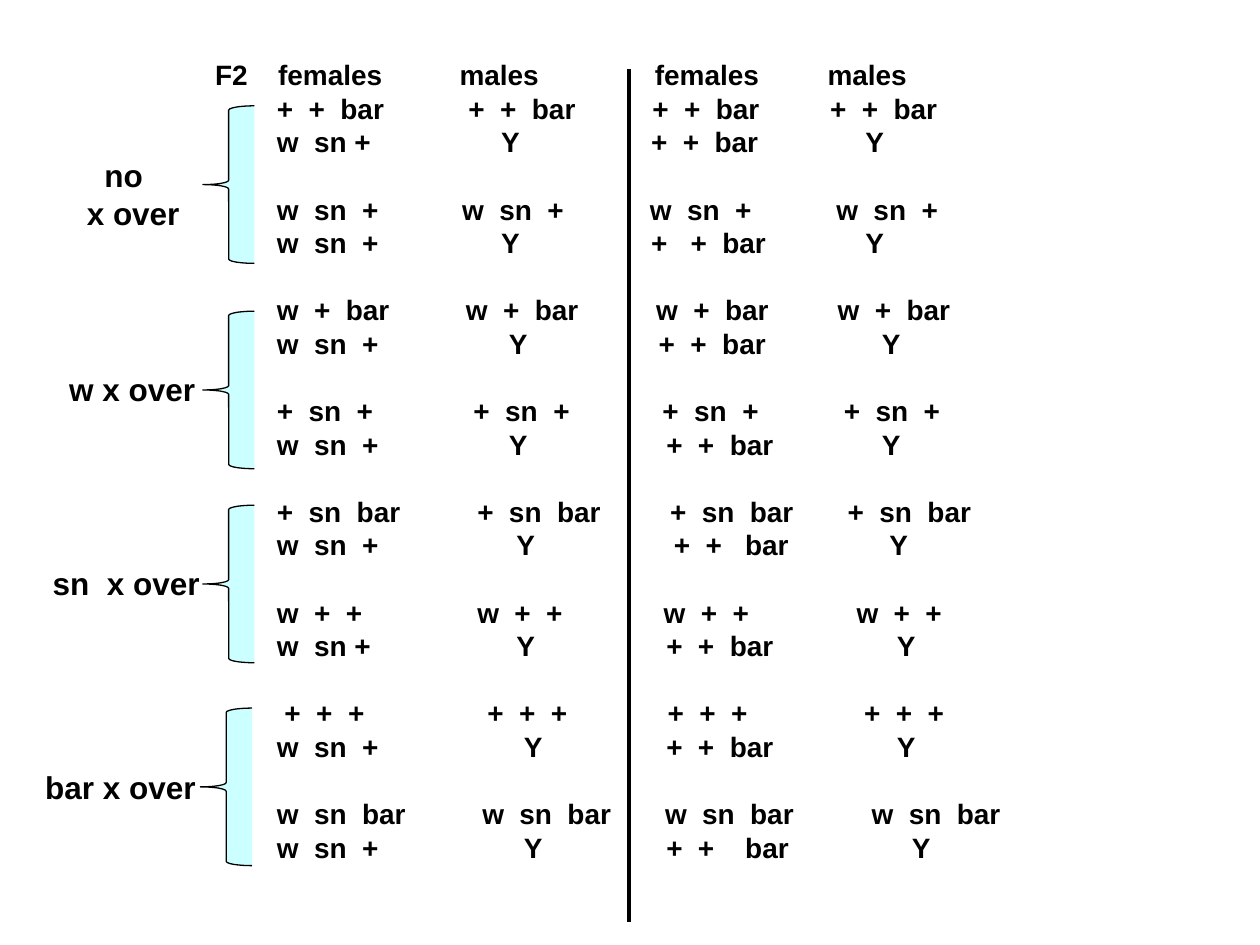
"""Build the slide of F2 offspring by crossover class."""
from typing import NamedTuple

from lxml.etree import SubElement
from pptx import Presentation
from pptx.dml.color import RGBColor
from pptx.enum.shapes import MSO_CONNECTOR, MSO_SHAPE
from pptx.oxml.ns import qn
from pptx.util import Inches, Pt

LEFT, INSET = 1.61, 0.1
STEP = 19.2
BLACK, CYAN = "000000", "CCFFFF"
FONT = {"name": "Arial", "bold": True}


class Row(NamedTuple):
    """One line of genotypes, with the slide position of each column."""
    cells: str
    stops: tuple
    lead: str = ""
    gap: bool = False


class Group(NamedTuple):
    """One crossover class: its label lines and its brace."""
    lines: tuple
    box: tuple
    brace: tuple


ROWS = [
    Row("females|males|females|males", (2.21, 3.65, 5.2, 6.57), lead="F2"),
    Row("+  +  bar|+  +  bar|+  +  bar|+  +  bar", (2.2, 3.72, 5.18, 6.59)),
    Row("w  sn +|Y|+  +  bar|Y", (2.2, 3.98, 5.17, 6.87)),
    Row("w  sn  +|w  sn  +|w  sn  +|w  sn  +", (2.2, 3.67, 5.16, 6.64), gap=True),
    Row("w  sn  +|Y|+   +  bar|Y", (2.2, 3.98, 5.17, 6.87)),
    Row("w  +  bar|w  +  bar|w  +  bar|w  +  bar", (2.2, 3.7, 5.21, 6.65), gap=True),
    Row("w  sn  +|Y|+  +  bar|Y", (2.2, 4.04, 5.23, 7)),
    Row("+  sn  +|+  sn  +|+  sn  +|+  sn  +", (2.2, 3.76, 5.26, 6.7), gap=True),
    Row("w  sn  +|Y|+  +  bar|Y", (2.2, 4.04, 5.29, 7)),
    Row("+  sn  bar|+  sn  bar|+  sn  bar|+  sn  bar", (2.2, 3.79, 5.32, 6.73), gap=True),
    Row("w  sn  +|Y|+  +   bar|Y", (2.2, 4.1, 5.35, 7.06)),
    Row("w  +  +|w  +  +|w  +  +|w  +  +", (2.2, 3.79, 5.27, 6.8), gap=True),
    Row("w  sn +|Y|+  +  bar|Y", (2.2, 4.1, 5.29, 7.12)),
    Row("+  +  +|+  +  +|+  +  +|+  +  +", (2.26, 3.87, 5.3, 6.86), gap=True),
    Row("w  sn  +|Y|+  +  bar|Y", (2.2, 4.16, 5.29, 7.12)),
    Row("w  sn  bar|w  sn  bar|w  sn  bar|w  sn  bar", (2.2, 3.83, 5.28, 6.92), gap=True),
    Row("w  sn  +|Y|+  +    bar|Y", (2.2, 4.16, 5.29, 7.24)),
]
GROUPS = [
    Group(("no", "x over"), (0.59, 1.19, 0.95, 0.71), (1.61, 0.84)),
    Group(("w x over",), (0.45, 2.89, 1.21, 0.4), (1.61, 2.47)),
    Group(("sn  x over",), (0.32, 4.43, 1.38, 0.4), (1.61, 4.01)),
    Group(("bar x over",), (0.26, 6.05, 1.41, 0.4), (1.59, 5.62)),
]


def tint(code: str) -> RGBColor:
    """Turn a hex string into a colour."""
    return RGBColor.from_string(code)


def write(para, text: str, size: float, lead: float) -> None:
    """Fill a paragraph with one styled run."""
    run = para.add_run()
    run.text = text
    for name, value in {**FONT, "size": Pt(size)}.items():
        setattr(run.font, name, value)
    run.font.color.rgb = tint(BLACK)
    para.line_spacing = Pt(lead)


def frame(slide, box: tuple, wrap: bool):
    """Add a text box and return its text frame."""
    body = slide.shapes.add_textbox(*map(Inches, box)).text_frame
    body.word_wrap = wrap
    return body


def lines(body, count: int) -> list:
    """Return the given number of paragraphs in a text frame."""
    return [body.paragraphs[0]] + [body.add_paragraph() for _ in range(count - 1)]


def draw_rows(slide, rows: list) -> None:
    """Write the genotype rows, with columns set by tab stops."""
    body = frame(slide, (LEFT, 0.41, 6.56, 6.6), True)
    for para, row in zip(lines(body, len(rows)), rows):
        write(para, "\t".join([row.lead, *row.cells.split("|")]), 16, STEP)
        para.space_before = Pt(STEP if row.gap else 0)
        tabs = SubElement(para._p.get_or_add_pPr(), qn("a:tabLst"))
        for stop in row.stops:
            place = Inches(stop - LEFT - INSET)
            SubElement(tabs, qn("a:tab"), pos=str(place), algn="l")


def draw_group(slide, group: Group) -> None:
    """Draw a brace and the label beside it."""
    brace = slide.shapes.add_shape(
        MSO_SHAPE.LEFT_BRACE, *map(Inches, (*group.brace, 0.41, 1.25)))
    brace.shadow.inherit = False
    brace.fill.solid()
    brace.fill.fore_color.rgb = tint(CYAN)
    brace.line.color.rgb = tint(BLACK)
    brace.line.width = Pt(0.75)
    paras = lines(frame(slide, group.box, False), len(group.lines))
    for para, text in zip(paras, group.lines):
        write(para, text, 18, 21.6)
    if len(paras) > 1:
        paras[0]._p.get_or_add_pPr().set("marL", str(Inches(0.14)))


def draw_rule(slide) -> None:
    """Draw the line between the two crosses."""
    rule = slide.shapes.add_connector(
        MSO_CONNECTOR.STRAIGHT, *map(Inches, (4.99, 0.55, 4.99, 7.32)))
    rule.line.color.rgb = tint(BLACK)
    rule.line.width = Pt(2.25)
    SubElement(rule._element.spPr, qn("a:effectLst"))


def main() -> None:
    """Build and save the slide."""
    deck = Presentation()
    deck.slide_width, deck.slide_height = Inches(10), Inches(7.5)
    slide = deck.slides.add_slide(deck.slide_layouts[6])
    draw_rows(slide, ROWS)
    for group in GROUPS:
        draw_group(slide, group)
    draw_rule(slide)
    deck.save("out.pptx")


if __name__ == "__main__":
    main()
